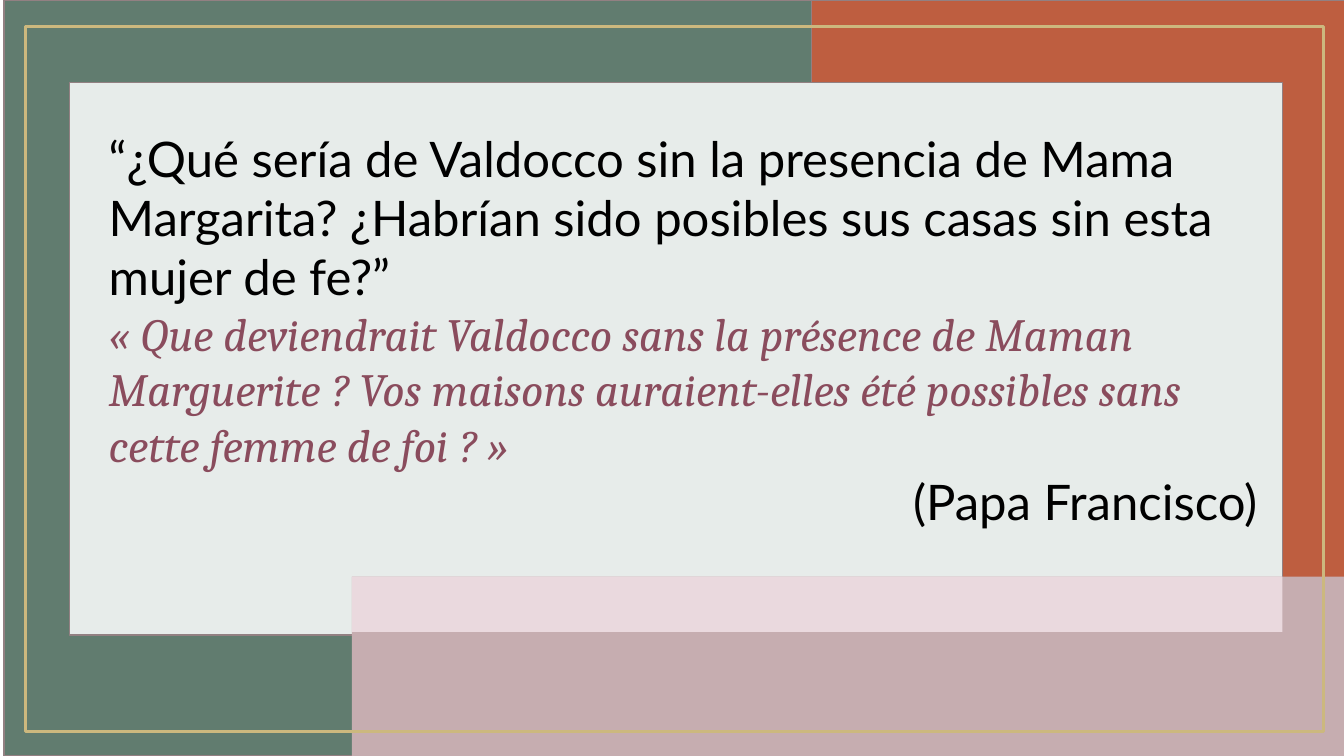
from dataclasses import dataclass

from pptx import Presentation
from pptx.dml.color import RGBColor
from pptx.enum.shapes import MSO_SHAPE
from pptx.enum.text import MSO_AUTO_SIZE, PP_ALIGN
from pptx.slide import Slide
from pptx.util import Emu, Pt

EMU_PER_PX = 9144
BLANK_LAYOUT = 6
RECTANGLE = MSO_SHAPE.RECTANGLE
GROW_TO_TEXT = MSO_AUTO_SIZE.SHAPE_TO_FIT_TEXT
LEFT = PP_ALIGN.LEFT
RIGHT = PP_ALIGN.RIGHT


@dataclass(frozen=True)
class Theme:
    green: str = "617C6F"
    terracotta: str = "BE5E40"
    paper: str = "E7ECEA"
    mauve: str = "C6ADB0"
    pale_pink: str = "EAD9DE"
    gold: str = "CCB87E"
    outline: str = "928082"
    ink: str = "000000"
    plum: str = "8A4C5D"
    spanish_font: str = "Lato"
    french_font: str = "Cambria"
    spanish_size: int = 35
    french_size: int = 33
    outline_width: int = 1
    frame_width: int = 2


THEME = Theme()


@dataclass(frozen=True)
class Box:
    left: int
    top: int
    width: int
    height: int

    def to_emu(self) -> tuple[Emu, Emu, Emu, Emu]:
        return px(self.left), px(self.top), px(self.width), px(self.height)


@dataclass(frozen=True)
class Panel:
    box: Box
    fill: str | None = None
    line: str | None = None
    line_width: int = THEME.outline_width


@dataclass(frozen=True)
class QuoteLine:
    text: str
    font_name: str = THEME.spanish_font
    size: int = THEME.spanish_size
    color: str = THEME.ink
    italic: bool = False
    alignment: PP_ALIGN = LEFT


PANELS = (
    Panel(Box(4, 0, 802, 750), THEME.green, THEME.outline),
    Panel(Box(805, 0, 529, 750), THEME.terracotta, THEME.outline),
    Panel(Box(69, 82, 1203, 548), THEME.paper, THEME.outline),
    Panel(Box(349, 572, 985, 178), THEME.mauve),
    Panel(Box(349, 572, 923, 55), THEME.pale_pink),
    Panel(Box(25, 26, 1288, 700), line=THEME.gold, line_width=THEME.frame_width),
)

QUOTE_BOX = Box(98, 123, 1159, 413)
QUOTE = (
    QuoteLine(
        "“¿Qué sería de Valdocco sin la presencia de Mama Margarita? "
        "¿Habrían sido posibles sus casas sin esta mujer de fe?”"
    ),
    QuoteLine(
        "« Que deviendrait Valdocco sans la présence de Maman Marguerite ? "
        "Vos maisons auraient-elles été possibles sans cette femme de foi ? »",
        font_name=THEME.french_font,
        size=THEME.french_size,
        color=THEME.plum,
        italic=True,
    ),
    QuoteLine("(Papa Francisco)", alignment=RIGHT),
)


def px(length: int) -> Emu:
    return Emu(length * EMU_PER_PX)


def draw_panel(slide: Slide, panel: Panel) -> None:
    shape = slide.shapes.add_shape(RECTANGLE, *panel.box.to_emu())
    shape.shadow.inherit = False
    if panel.fill:
        shape.fill.solid()
        shape.fill.fore_color.rgb = RGBColor.from_string(panel.fill)
    else:
        shape.fill.background()
    if panel.line:
        shape.line.color.rgb = RGBColor.from_string(panel.line)
        shape.line.width = Pt(panel.line_width)
    else:
        shape.line.fill.background()


def draw_quote(slide: Slide, box: Box, lines: tuple[QuoteLine, ...]) -> None:
    text_frame = slide.shapes.add_textbox(*box.to_emu()).text_frame
    text_frame.word_wrap = True
    text_frame.auto_size = GROW_TO_TEXT
    for index, line in enumerate(lines):
        paragraph = text_frame.add_paragraph() if index else text_frame.paragraphs[0]
        paragraph.text = line.text
        paragraph.alignment = line.alignment
        paragraph.font.name = line.font_name
        paragraph.font.size = Pt(line.size)
        paragraph.font.italic = line.italic
        paragraph.font.color.rgb = RGBColor.from_string(line.color)


def main() -> None:
    presentation = Presentation()
    presentation.slide_width = px(1333)
    presentation.slide_height = px(750)
    slide = presentation.slides.add_slide(presentation.slide_layouts[BLANK_LAYOUT])
    for panel in PANELS:
        draw_panel(slide, panel)
    draw_quote(slide, QUOTE_BOX, QUOTE)
    presentation.save("out.pptx")


if __name__ == "__main__":
    main()
